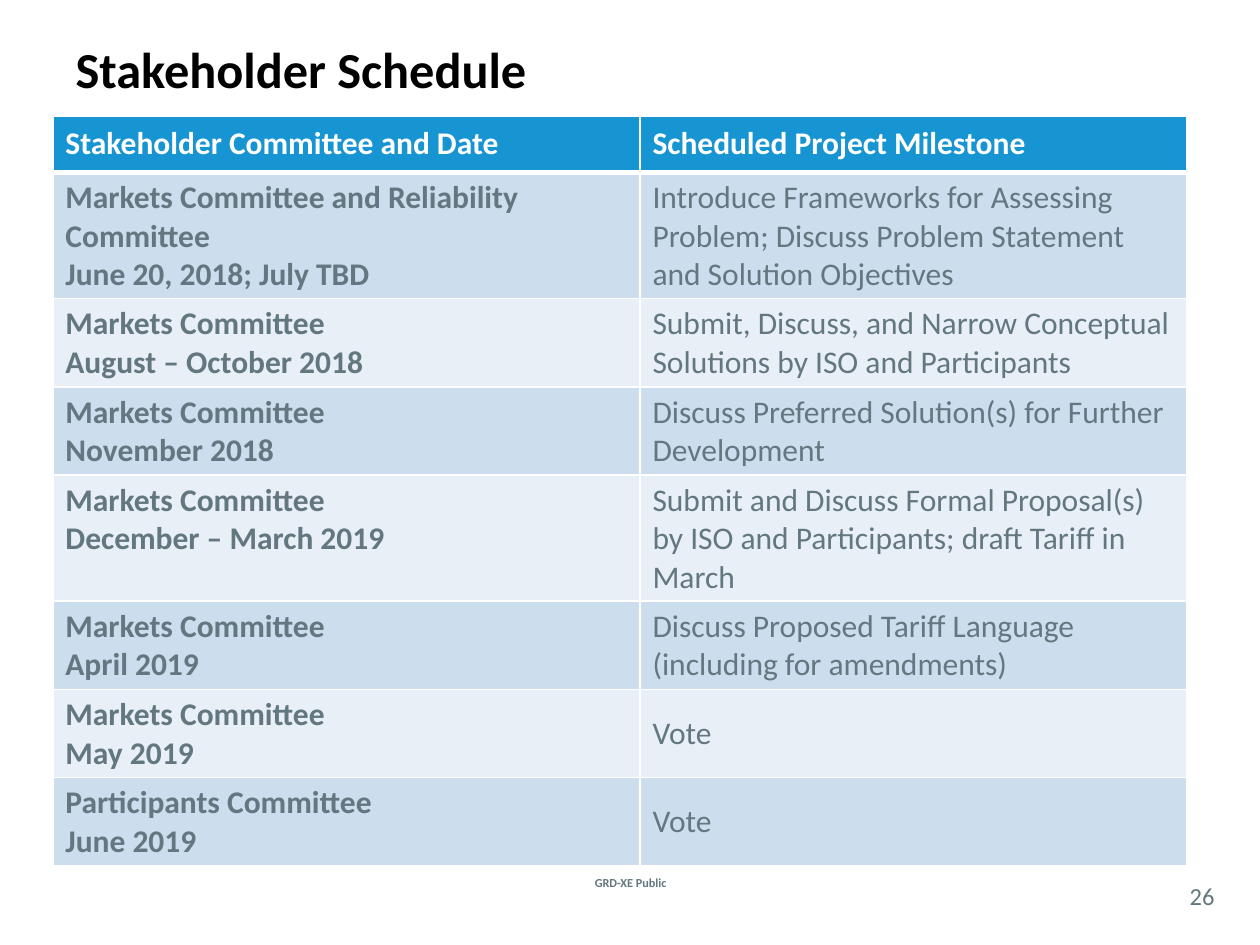
from lxml.etree import SubElement
from pptx import Presentation
from pptx.dml.color import RGBColor
from pptx.enum.text import MSO_ANCHOR as Anchor, PP_ALIGN as Align
from pptx.oxml.ns import qn
from pptx.util import Pt

COLORS = {
    "title": "000000",
    "text": "62777F",
    "header": "1795D2",
    "white": "FFFFFF",
    "band_dark": "CCDDEE",
    "band_light": "E8EFF7",
}
FONT = "Calibri"
HEADER = ("Stakeholder Committee and Date", "Scheduled Project Milestone")
MILESTONES = [
    ("Markets Committee and Reliability Committee\nJune 20, 2018; July TBD",
     "Introduce Frameworks for Assessing Problem; Discuss Problem Statement and Solution Objectives"),
    ("Markets Committee\nAugust – October 2018",
     "Submit, Discuss, and Narrow Conceptual Solutions by ISO and Participants"),
    ("Markets Committee\nNovember 2018",
     "Discuss Preferred Solution(s) for Further Development"),
    ("Markets Committee\nDecember – March 2019",
     "Submit and Discuss Formal Proposal(s) by ISO and Participants; draft Tariff in March"),
    ("Markets Committee\nApril 2019",
     "Discuss Proposed Tariff Language (including for amendments)"),
    ("Markets Committee\nMay 2019", "Vote"),
    ("Participants Committee\nJune 2019", "Vote"),
]
COLUMN_WIDTHS = (335.5, 312.5)
HEADER_HEIGHT, TWO_LINE_HEIGHT, THREE_LINE_HEIGHT = 32.4, 49, 70.6
THREE_LINE_ROWS = (1, 4)


def rgb(name):
    return RGBColor.from_string(COLORS[name])


def format_text(text_frame, size, color, bold=False, align=Align.LEFT):
    for paragraph in text_frame.paragraphs:
        paragraph.alignment = align
        for run in paragraph.runs:
            run.font.name = FONT
            run.font.size = Pt(size)
            run.font.bold = bold
            run.font.color.rgb = rgb(color)


def place(shape, box):
    shape.left, shape.top, shape.width, shape.height = map(Pt, box)


def add_title(slide, box, text):
    title = slide.shapes.title
    place(title, box)
    title.text_frame.text = text
    title.text_frame.vertical_anchor = Anchor.MIDDLE
    format_text(title.text_frame, 28.8, "title", bold=True)


def add_label(slide, box, text, size, bold=False):
    text_frame = slide.shapes.add_textbox(*map(Pt, box)).text_frame
    text_frame.word_wrap = True
    text_frame.vertical_anchor = Anchor.MIDDLE
    text_frame.margin_left = text_frame.margin_right = 0
    text_frame.margin_top = text_frame.margin_bottom = 0
    text_frame.text = text
    format_text(text_frame, size, "text", bold, Align.CENTER)


def set_borders(cell, widths):
    """Draw white borders; widths gives points for each of L, R, T and B."""
    properties = cell._tc.get_or_add_tcPr()
    for side, width in widths.items():
        line = SubElement(properties, qn(f"a:ln{side}"), w=str(Pt(width)))
        fill = SubElement(line, qn("a:solidFill"))
        SubElement(fill, qn("a:srgbClr"), val=COLORS["white"])


def add_schedule(slide, box):
    rows = [HEADER, *MILESTONES]
    table = slide.shapes.add_table(len(rows), len(HEADER), *map(Pt, box)).table
    for column, width in zip(table.columns, COLUMN_WIDTHS):
        column.width = Pt(width)
    for row_index, texts in enumerate(rows):
        is_header = row_index == 0
        if is_header:
            height, fill = HEADER_HEIGHT, "header"
        else:
            height = THREE_LINE_HEIGHT if row_index in THREE_LINE_ROWS else TWO_LINE_HEIGHT
            fill = "band_dark" if row_index % 2 else "band_light"
        table.rows[row_index].height = Pt(height)
        for column_index, text in enumerate(texts):
            is_date = column_index == 0
            cell = table.cell(row_index, column_index)
            top = 3 if row_index == 1 else 1
            set_borders(cell, {"L": 1, "R": 1, "T": top, "B": 3 if is_header else 1})
            cell.fill.solid()
            cell.fill.fore_color.rgb = rgb(fill)
            cell.vertical_anchor = Anchor.TOP if is_date and not is_header else Anchor.MIDDLE
            cell.text_frame.text = text
            format_text(cell.text_frame, 18, "white" if is_header else "text",
                        bold=is_header or is_date)


def main():
    presentation = Presentation()
    presentation.slide_width, presentation.slide_height = Pt(720), Pt(540)
    slide = presentation.slides.add_slide(presentation.slide_layouts[5])
    add_label(slide, (307.5, 498.2, 105.8, 12.2), "GRD-XE Public", 7, bold=True)
    add_title(slide, (36, 18, 648, 41.8), "Stakeholder Schedule")
    add_label(slide, (671.8, 501.1, 30.2, 20.9), "26", 14)
    add_schedule(slide, (30.2, 66.2, 648, 428.4))
    presentation.save("out.pptx")


if __name__ == "__main__":
    main()
